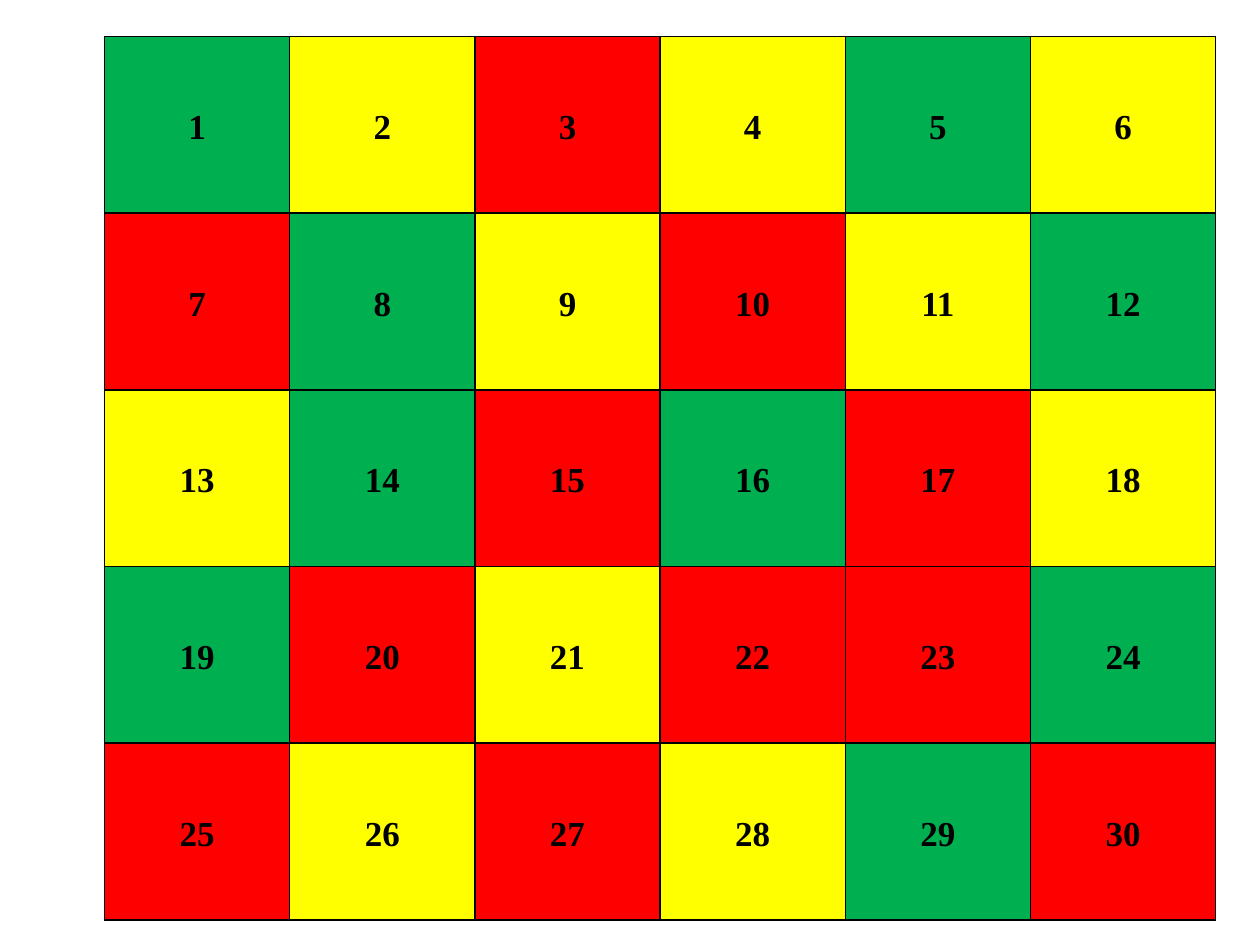
from lxml.etree import SubElement
from pptx import Presentation
from pptx.dml.color import RGBColor
from pptx.enum.text import MSO_ANCHOR, PP_ALIGN
from pptx.oxml.ns import qn
from pptx.util import Inches, Pt

FILLS = {"G": "00B050", "Y": "FFFF00", "R": "FF0000"}
ROWS = ["GYRYGY", "RGYRYG", "YGRGRY", "GRYRRG", "RYRYGR"]


def paint(fill, color):
    fill.solid()
    fill.fore_color.rgb = RGBColor.from_string(color)


class Board:
    """Hold the style and the slide of a numbered colour grid."""

    font = "Times New Roman"
    size = 20
    ink = "000000"
    line = 1

    def __init__(self, slide):
        self.slide = slide

    def border(self, cell):
        props = cell._tc.get_or_add_tcPr()
        for index, side in enumerate(("lnL", "lnR", "lnT", "lnB")):
            edge = props.makeelement(qn(f"a:{side}"), {"w": str(Pt(self.line))})
            fill = SubElement(edge, qn("a:solidFill"))
            SubElement(fill, qn("a:srgbClr"), val=self.ink)
            props.insert(index, edge)

    def cell(self, cell, text, color):
        cell.text = text
        cell.vertical_anchor = MSO_ANCHOR.MIDDLE
        cell.margin_left = cell.margin_right = Inches(0.07)
        cell.margin_top = cell.margin_bottom = 0
        paint(cell.fill, color)
        self.border(cell)
        para = cell.text_frame.paragraphs[0]
        para.alignment = PP_ALIGN.CENTER
        para.line_spacing = 1.15
        para.font.name = self.font
        para.font.size = Pt(self.size)
        para.font.bold = True
        paint(para.font.fill, self.ink)

    def table(self, left, top, width, height, rows):
        count = len(rows[0])
        frame = self.slide.shapes.add_table(
            len(rows), count, Inches(left), Inches(top), Inches(width), Inches(height)
        )
        grid = frame.table
        grid.first_row = grid.horz_banding = False
        for row, codes in enumerate(rows):
            for col, code in enumerate(codes):
                number = row * count + col + 1
                self.cell(grid.cell(row, col), str(number), FILLS[code])


def main():
    deck = Presentation()
    deck.slide_width = Inches(10)
    deck.slide_height = Inches(7.5)
    board = Board(deck.slides.add_slide(deck.slide_layouts[6]))
    board.table(0.83, 0.29, 8.82, 7.01, ROWS)
    deck.save("out.pptx")


if __name__ == "__main__":
    main()
